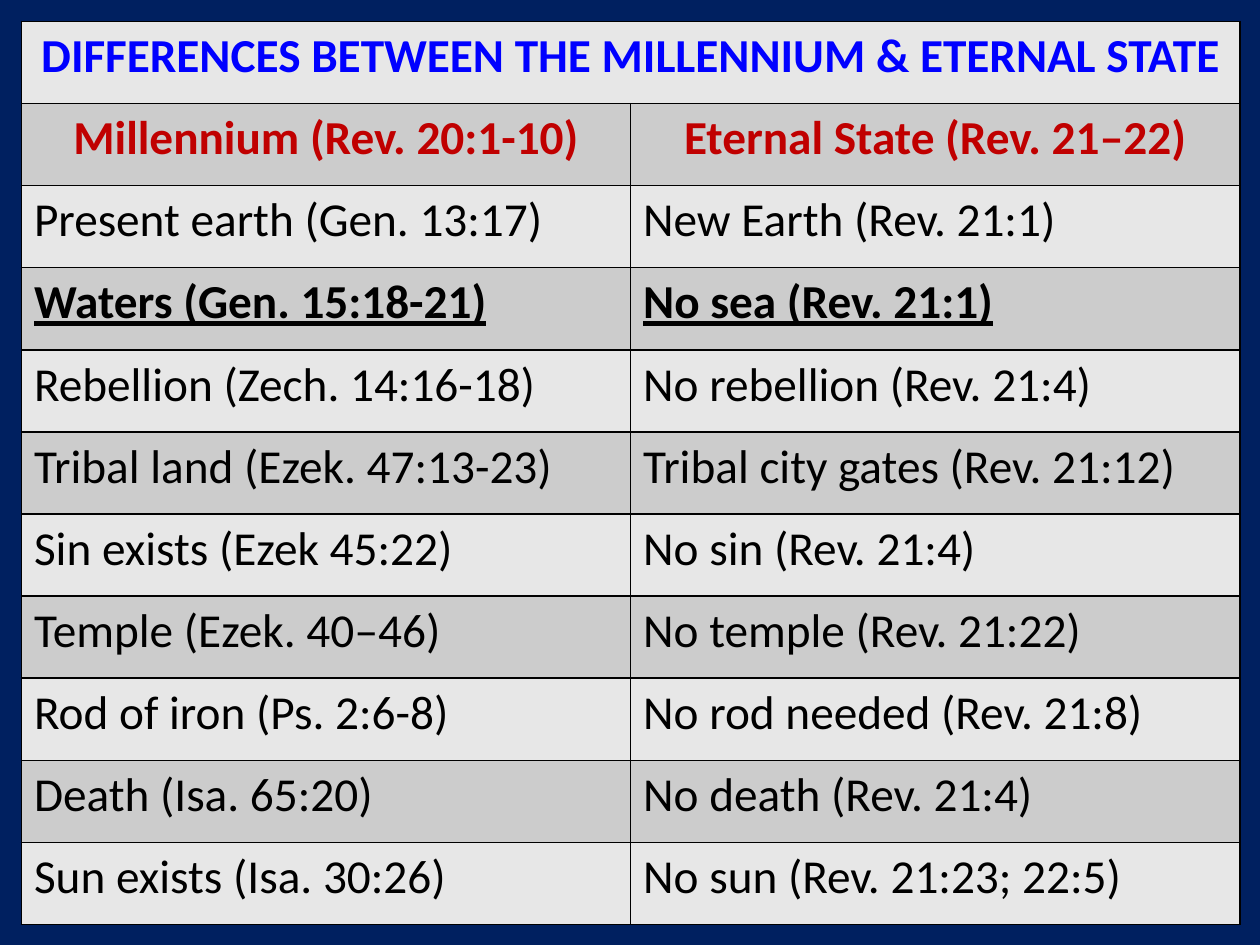
from lxml import etree
from pptx import Presentation
from pptx.dml.color import RGBColor
from pptx.enum.text import MSO_ANCHOR, PP_ALIGN
from pptx.oxml.ns import qn
from pptx.util import Inches, Pt

LEFT, CENTER = PP_ALIGN.LEFT, PP_ALIGN.CENTER
TOP = MSO_ANCHOR.TOP

TITLE = "DIFFERENCES BETWEEN THE MILLENNIUM & ETERNAL STATE"
HEADINGS = ("Millennium (Rev. 20:1-10)", "Eternal State (Rev. 21‒22)")
CONTRASTS = [
    ("Present earth (Gen. 13:17)", "New Earth (Rev. 21:1)"),
    ("Waters (Gen. 15:18-21)", "No sea (Rev. 21:1)"),
    ("Rebellion (Zech. 14:16-18)", "No rebellion (Rev. 21:4)"),
    ("Tribal land (Ezek. 47:13-23)", "Tribal city gates (Rev. 21:12)"),
    ("Sin exists (Ezek 45:22)", "No sin (Rev. 21:4)"),
    ("Temple (Ezek. 40‒46)", "No temple (Rev. 21:22)"),
    ("Rod of iron (Ps. 2:6-8)", "No rod needed (Rev. 21:8)"),
    ("Death (Isa. 65:20)", "No death (Rev. 21:4)"),
    ("Sun exists (Isa. 30:26)", "No sun (Rev. 21:23; 22:5)"),
]
HIGHLIGHT = 1  # index of the contrast under discussion


def rgb(value):
    return RGBColor.from_string(value)


class Deck:
    font = "Calibri"
    size = Pt(27)
    spacing = Pt(12)
    background = "002060"
    bands = ("E7E7E7", "CCCCCC")
    border = "000000"
    title_color, heading_color, body_color = "0000FF", "C00000", "000000"

    def __init__(self, prs):
        self.s = prs.slides.add_slide(prs.slide_layouts[6])
        fill = self.s.background.fill
        fill.solid()
        fill.fore_color.rgb = rgb(self.background)

    def table(self, rows, cols, left, top, width, height):
        tbl = self.s.shapes.add_table(
            rows, cols, Inches(left), Inches(top), Inches(width), Inches(height)).table
        tbl.first_row = tbl.horz_banding = False
        for col in tbl.columns:
            col.width = Inches(width / cols)
        for i, row in enumerate(tbl.rows):
            row.height = Inches(height / rows)
            for cell in row.cells:
                self.borders(cell)
                cell.fill.solid()
                cell.fill.fore_color.rgb = rgb(self.bands[i % 2])
                cell.vertical_anchor = TOP
        return tbl

    def borders(self, cell):
        tcPr = cell._tc.get_or_add_tcPr()
        for side in ("a:lnL", "a:lnR", "a:lnT", "a:lnB"):
            ln = etree.SubElement(tcPr, qn(side), w=str(Pt(1)))
            fill = etree.SubElement(ln, qn("a:solidFill"))
            etree.SubElement(fill, qn("a:srgbClr"), val=self.border)

    def text(self, cell, text, color, align=LEFT, bold=False, underline=False):
        p = cell.text_frame.paragraphs[0]
        p.alignment = align
        p.space_before = p.space_after = self.spacing
        r = p.add_run()
        r.text = text
        r.font.name, r.font.size = self.font, self.size
        r.font.bold, r.font.underline = bold, underline
        r.font.color.rgb = rgb(color)


def main():
    prs = Presentation()
    prs.slide_width, prs.slide_height = Inches(10), Inches(7.5)
    deck = Deck(prs)
    tbl = deck.table(len(CONTRASTS) + 2, 2, 0.17, 0.17, 9.67, 7.17)

    # Title across both columns
    tbl.cell(0, 0).merge(tbl.cell(0, 1))
    deck.text(tbl.cell(0, 0), TITLE, deck.title_color, CENTER, bold=True)

    # Column headings
    for col, heading in enumerate(HEADINGS):
        deck.text(tbl.cell(1, col), heading, deck.heading_color, CENTER, bold=True)

    # Contrasts
    for i, pair in enumerate(CONTRASTS):
        marked = i == HIGHLIGHT
        for col, text in enumerate(pair):
            deck.text(tbl.cell(i + 2, col), text, deck.body_color,
                      bold=marked, underline=marked)

    prs.save("out.pptx")


if __name__ == "__main__":
    main()
